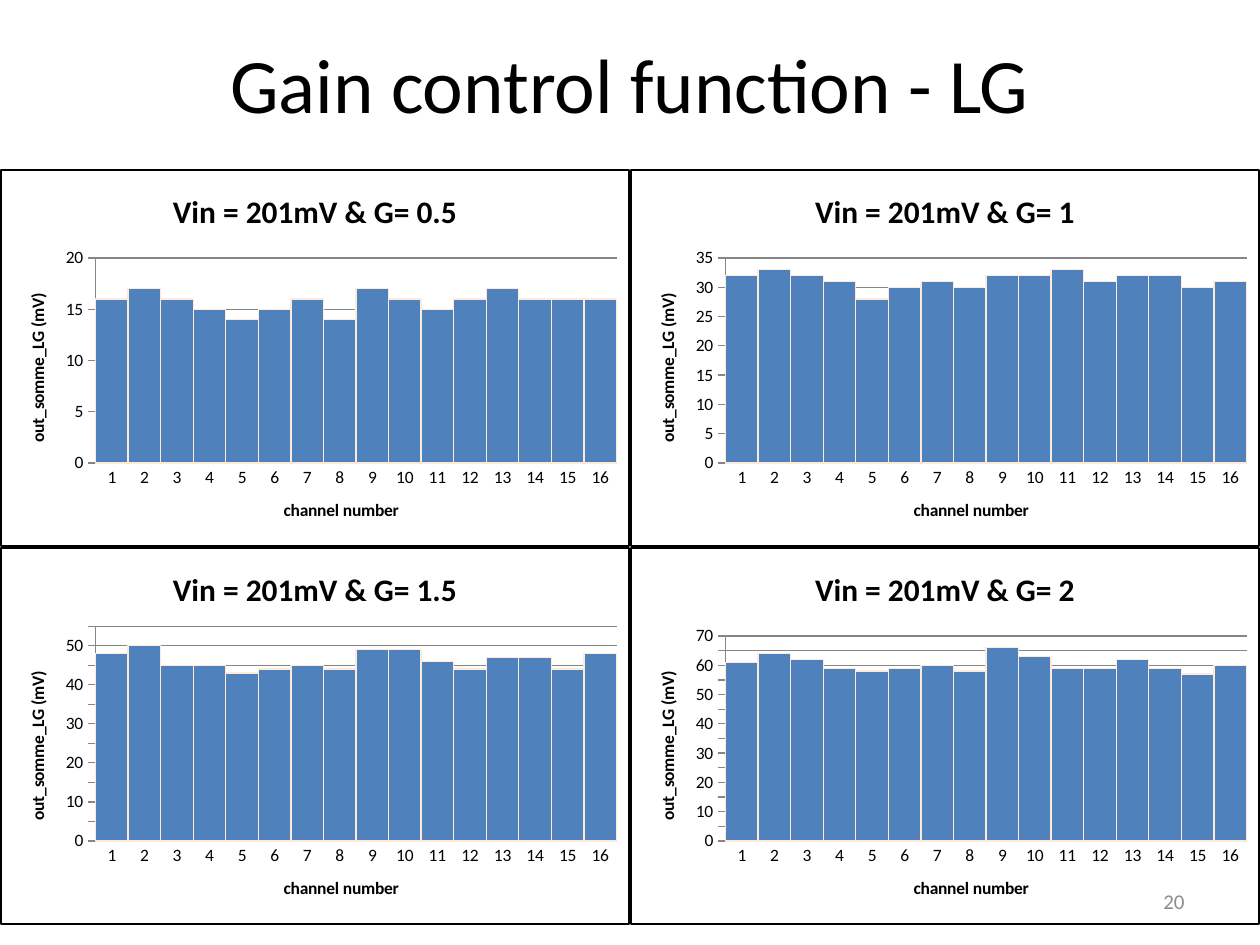
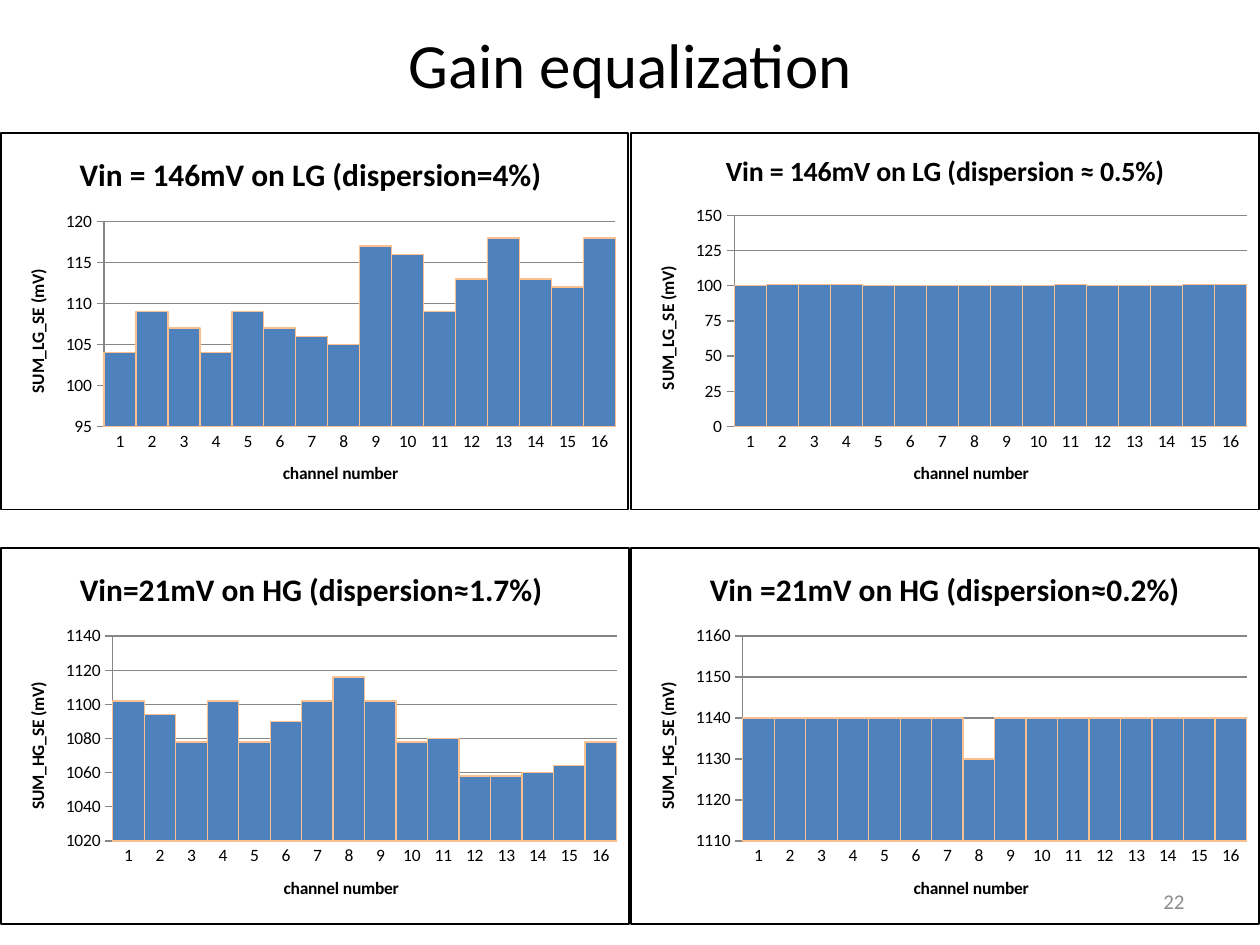
from dataclasses import dataclass

from pptx import Presentation
from pptx.chart.axis import CategoryAxis, ValueAxis
from pptx.chart.chart import Chart
from pptx.chart.data import CategoryChartData
from pptx.dml.color import RGBColor
from pptx.enum.chart import XL_CHART_TYPE, XL_TICK_MARK
from pptx.enum.text import MSO_ANCHOR, PP_ALIGN
from pptx.oxml import parse_xml
from pptx.oxml.ns import nsdecls, qn
from pptx.slide import Slide
from pptx.text.text import Font
from pptx.util import Inches, Pt

COLUMNS = XL_CHART_TYPE.COLUMN_CLUSTERED
TICK_NONE, TICK_OUT = XL_TICK_MARK.NONE, XL_TICK_MARK.OUTSIDE
MIDDLE = MSO_ANCHOR.MIDDLE
CENTER, RIGHT = PP_ALIGN.CENTER, PP_ALIGN.RIGHT

FONT = "Calibri"
COLORS = {
    "text": "000000",
    "number": "8C8C8C",
    "bar": "4F81BD",
    "grid": "868686",
    "pale_edge": "FDEADA",
    "orange_edge": "FAC090",
}
CHANNELS = [str(channel) for channel in range(1, 17)]
PANEL_WIDTH, PANEL_HEIGHT = 5, 3
BOTTOM_ROW_TOP = 4.34


@dataclass
class Panel:
    """One channel histogram with its value axis."""
    title: str
    axis_title: str
    low: float
    high: float
    step: float
    values: list[float]
    title_size: float = 18
    width: float = PANEL_WIDTH


@dataclass
class GainSlide:
    title: str
    title_top: float
    title_height: float
    title_size: float
    top_row_top: float
    edge: str
    number: str
    panels: list[Panel]


LG_AXIS = "out_somme_LG (mV)"
SUM_LG_AXIS = "SUM_LG_SE (mV)"
SUM_HG_AXIS = "SUM_HG_SE (mV)"

GAIN_SLIDES = [
    GainSlide("Gain control function - LG", 0.03, 1.25, 44, 1.34, "pale_edge", "20", [
        Panel("Vin = 201mV & G= 0.5", LG_AXIS, 0, 20, 5,
              [16, 17, 16, 15, 14, 15, 16, 14, 17, 16, 15, 16, 17, 16, 16, 16]),
        Panel("Vin = 201mV & G= 1", LG_AXIS, 0, 35, 5,
              [32, 33, 32, 31, 28, 30, 31, 30, 32, 32, 33, 31, 32, 32, 30, 31]),
        Panel("Vin = 201mV & G= 1.5", LG_AXIS, 0, 55, 5,
              [48, 50, 45, 45, 43, 44, 45, 44, 49, 49, 46, 44, 47, 47, 44, 48]),
        Panel("Vin = 201mV & G= 2", LG_AXIS, 0, 70, 5,
              [61, 64, 62, 59, 58, 59, 60, 58, 66, 63, 59, 59, 62, 59, 57, 60]),
    ]),
    GainSlide("Gain equalization", 0.18, 0.65, 36, 1.05, "orange_edge", "22", [
        Panel("Vin = 146mV on LG (dispersion=4%) ", SUM_LG_AXIS, 95, 120, 5,
              [104, 109, 107, 104, 109, 107, 106, 105,
               117, 116, 109, 113, 118, 113, 112, 118], width=4.99),
        Panel("Vin = 146mV on LG (dispersion ≈ 0.5%)", SUM_LG_AXIS, 0, 150, 25,
              [100, 101, 101, 101, 100, 100, 100, 100,
               100, 100, 101, 100, 100, 100, 101, 101], title_size=16),
        Panel("Vin=21mV on HG (dispersion≈1.7%) ", SUM_HG_AXIS, 1020, 1140, 20,
              [1102, 1094, 1078, 1102, 1078, 1090, 1102, 1116,
               1102, 1078, 1080, 1058, 1058, 1060, 1064, 1078]),
        Panel("Vin =21mV on HG (dispersion≈0.2%)", SUM_HG_AXIS, 1110, 1160, 10,
              [1140] * 7 + [1130] + [1140] * 8),
    ]),
]


def rgb(name: str) -> RGBColor:
    return RGBColor.from_string(COLORS[name])


def style_font(font: Font, size: float, color: str = "text", bold: bool = False) -> None:
    font.name = FONT
    font.size = Pt(size)
    font.bold = bold
    font.color.rgb = rgb(color)


def add_text(slide: Slide, text: str, box: tuple[float, float, float, float],
             size: float, color: str, alignment: PP_ALIGN) -> None:
    frame = slide.shapes.add_textbox(*map(Inches, box)).text_frame
    frame.word_wrap = True
    frame.vertical_anchor = MIDDLE
    paragraph = frame.paragraphs[0]
    paragraph.text = text
    paragraph.alignment = alignment
    style_font(paragraph.font, size, color)


def frame_chart(chart: Chart) -> None:
    """Give the chart area a thin border and no fill."""
    border = parse_xml(
        f'<c:spPr {nsdecls("c", "a")}><a:noFill/><a:ln w="{Pt(1)}"><a:solidFill>'
        f'<a:srgbClr val="{COLORS["text"]}"/></a:solidFill></a:ln></c:spPr>')
    chart.element.find(qn("c:chart")).addnext(border)


def style_axis(axis: CategoryAxis | ValueAxis, title: str, tick: XL_TICK_MARK) -> None:
    axis.major_tick_mark = tick
    axis.minor_tick_mark = TICK_NONE
    axis.format.line.color.rgb = rgb("grid")
    axis.format.line.width = Pt(0.75)
    paragraph = axis.axis_title.text_frame.paragraphs[0]
    paragraph.text = title
    style_font(paragraph.font, 10, bold=True)


def add_panel(slide: Slide, panel: Panel, left: float, top: float, edge: str) -> None:
    data = CategoryChartData()
    data.categories = CHANNELS
    data.add_series("Series 1", panel.values)
    chart = slide.shapes.add_chart(COLUMNS, Inches(left), Inches(top), Inches(panel.width),
                                   Inches(PANEL_HEIGHT), data).chart
    style_font(chart.font, 10)
    frame_chart(chart)
    chart.has_legend = False
    title = chart.chart_title.text_frame.paragraphs[0]
    title.text = panel.title
    style_font(title.font, panel.title_size, bold=True)

    style_axis(chart.category_axis, "channel number", TICK_NONE)
    value_axis = chart.value_axis
    style_axis(value_axis, panel.axis_title, TICK_OUT)
    for body in value_axis.axis_title.element.iter(qn("a:bodyPr")):
        body.set("rot", "-5400000")
        body.set("vert", "horz")
    value_axis.minimum_scale = panel.low
    value_axis.maximum_scale = panel.high
    value_axis.major_unit = panel.step
    value_axis.has_major_gridlines = True
    gridline = value_axis.major_gridlines.format.line
    gridline.color.rgb = rgb("grid")
    gridline.width = Pt(0.75)

    plot = chart.plots[0]
    plot.gap_width = 0
    plot.vary_by_categories = False
    bars = plot.series[0].format
    bars.fill.solid()
    bars.fill.fore_color.rgb = rgb("bar")
    bars.line.color.rgb = rgb(edge)
    bars.line.width = Pt(0.75)


def build_slide(presentation: Presentation, content: GainSlide) -> None:
    slide = presentation.slides.add_slide(presentation.slide_layouts[6])
    add_text(slide, content.title, (0.5, content.title_top, 9, content.title_height),
             content.title_size, "text", CENTER)
    row_tops = (content.top_row_top, BOTTOM_ROW_TOP)
    for index, panel in enumerate(content.panels):
        row, column = divmod(index, 2)
        add_panel(slide, panel, column * PANEL_WIDTH, row_tops[row], content.edge)
    add_text(slide, content.number, (7.17, 6.95, 2.33, 0.4), 12, "number", RIGHT)


def main() -> None:
    presentation = Presentation()
    presentation.slide_width = Inches(10)
    presentation.slide_height = Inches(7.5)
    for content in GAIN_SLIDES:
        build_slide(presentation, content)
    presentation.save("out.pptx")


if __name__ == "__main__":
    main()
